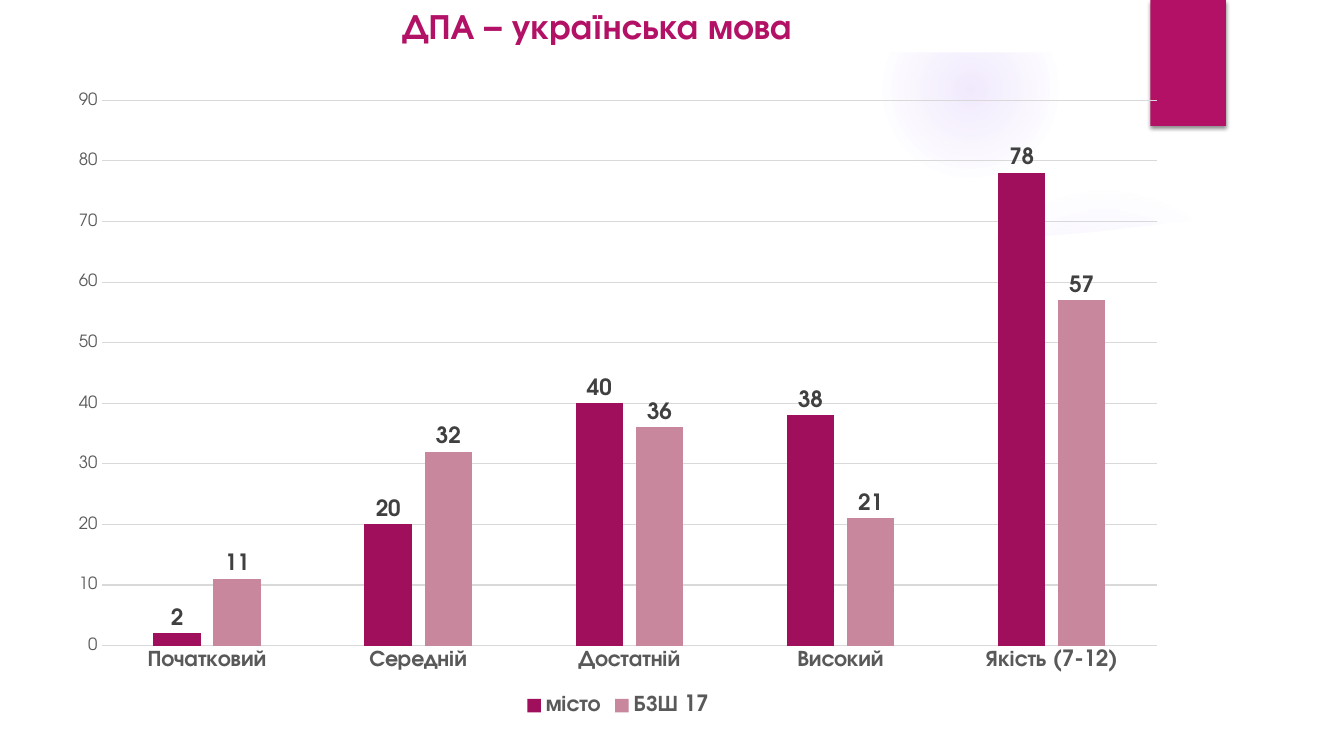
from lxml.etree import fromstring
from pptx import Presentation
from pptx.chart.data import CategoryChartData
from pptx.dml.color import RGBColor
from pptx.enum.chart import XL_CHART_TYPE, XL_LABEL_POSITION, XL_LEGEND_POSITION, XL_TICK_MARK
from pptx.enum.shapes import MSO_SHAPE
from pptx.enum.text import MSO_ANCHOR, PP_ALIGN
from pptx.oxml.ns import qn
from pptx.util import Inches, Pt

FONT = "TeX Gyre Adventor"
NS = 'xmlns:a="http://schemas.openxmlformats.org/drawingml/2006/main"'


def rgb(color):
    return RGBColor.from_string(color)


def style(font, size, color, bold=False):
    font.name, font.size, font.bold = FONT, Pt(size), bold
    font.color.rgb = rgb(color)


prs = Presentation()
prs.slide_width, prs.slide_height = Inches(13.33), Inches(7.5)
W, H = prs.slide_width, prs.slide_height
s = prs.slides.add_slide(prs.slide_layouts[6])

# Soft violet glows: left, top, diameter, (position %, opacity %) stops
glows = [
    (9.41, 1.83, 3.08, [(0, 7), (36, 6), (69, 0)]),
    (8.75, 0.01, 1.75, [(0, 14), (36, 7), (73, 0)]),
]
for left, top, size, stops in glows:
    sp = s.shapes.add_shape(MSO_SHAPE.OVAL, Inches(left), Inches(top), Inches(size), Inches(size))
    sp.shadow.inherit = False
    sp.line.fill.background()
    sp.fill.background()
    gs = "".join(
        f'<a:gs pos="{pos * 1000}"><a:srgbClr val="9B6BF2"><a:alpha val="{alpha * 1000}"/></a:srgbClr></a:gs>'
        for pos, alpha in stops)
    grad = fromstring(
        f'<a:gradFill {NS}><a:gsLst>{gs}</a:gsLst><a:path path="circle">'
        '<a:fillToRect l="50000" t="50000" r="50000" b="50000"/></a:path></a:gradFill>')
    spPr = sp.element.spPr
    spPr.replace(spPr.find(qn("a:noFill")), grad)

# White panel with a sagging top edge, and white strip above the glows
edge = [(0.5, 2.04), (1.35, 2.15), (2.49, 2.27), (4.01, 2.38), (5.35, 2.45), (6.82, 2.48),
        (8.13, 2.46), (9.21, 2.42), (10.04, 2.37), (10.88, 2.3), (11.72, 2.2), (12.84, 2.04)]
fb = s.shapes.build_freeform(Inches(0.5), Inches(7), scale=1.0)
fb.add_line_segments([(Inches(x), Inches(y)) for x, y in edge + [(12.84, 7)]])
panel = fb.convert_to_shape()
strip = s.shapes.add_shape(MSO_SHAPE.RECTANGLE, 0, 0, W, Inches(0.52))

# Magenta tab
tab = s.shapes.add_shape(MSO_SHAPE.RECTANGLE, Inches(11.41), 0, Inches(0.75), H // 6)
for sp, color in [(panel, "FFFFFF"), (strip, "FFFFFF"), (tab, "B31166")]:
    sp.shadow.inherit = False
    sp.line.fill.background()
    sp.fill.solid()
    sp.fill.fore_color.rgb = rgb(color)
tab.element.spPr.find(qn("a:effectLst")).append(fromstring(
    f'<a:outerShdw {NS} blurRad="{Pt(3)}" dist="{Pt(2)}" dir="5400000" rotWithShape="0">'
    '<a:srgbClr val="000000"><a:alpha val="45000"/></a:srgbClr></a:outerShdw>'))

# Title
tf = s.shapes.add_textbox(Inches(3.89), 0, Inches(5.41), Inches(0.5)).text_frame
tf.word_wrap = True
tf.vertical_anchor = MSO_ANCHOR.MIDDLE
p = tf.paragraphs[0]
p.alignment = PP_ALIGN.LEFT
r = p.add_run()
r.text = "ДПА – українська мова"
style(r.font, 25.2, "B31166", True)

# Chart
data = CategoryChartData()
data.categories = ["Початковий", "Середній", "Достатній", "Високий", "Якість (7-12)"]
data.add_series("місто", [2, 20, 40, 38, 78])
data.add_series("БЗШ 17", [11, 32, 36, 21, 57])
chart = s.shapes.add_chart(XL_CHART_TYPE.COLUMN_CLUSTERED, Inches(0.56), Inches(0.79),
                           Inches(11.14), Inches(6.36), data).chart
style(chart.font, 10, "000000")
chart.has_title = False
chart.has_legend = True
chart.legend.position = XL_LEGEND_POSITION.BOTTOM
chart.legend.include_in_layout = False
style(chart.legend.font, 16, "595959", True)

plot = chart.plots[0]
plot.gap_width, plot.overlap, plot.vary_by_categories = 219, -27, False
for series, color in zip(plot.series, ["9F0F5B", "C8879C"]):
    series.format.fill.solid()
    series.format.fill.fore_color.rgb = rgb(color)
    labels = series.data_labels
    labels.show_value = True
    labels.position = XL_LABEL_POSITION.OUTSIDE_END
    style(labels.font, 16, "404040", True)

# Axes
cat, val = chart.category_axis, chart.value_axis
for axis, size, bold in [(cat, 16, True), (val, 12, False)]:
    axis.major_tick_mark = axis.minor_tick_mark = XL_TICK_MARK.NONE
    style(axis.tick_labels.font, size, "595959", bold)
val.minimum_scale, val.maximum_scale, val.major_unit = 0, 90, 10
val.format.line.fill.background()
for line in [cat.format.line, val.major_gridlines.format.line]:
    line.color.rgb = rgb("D9D9D9")
    line.width = Pt(0.75)

prs.save("out.pptx")
